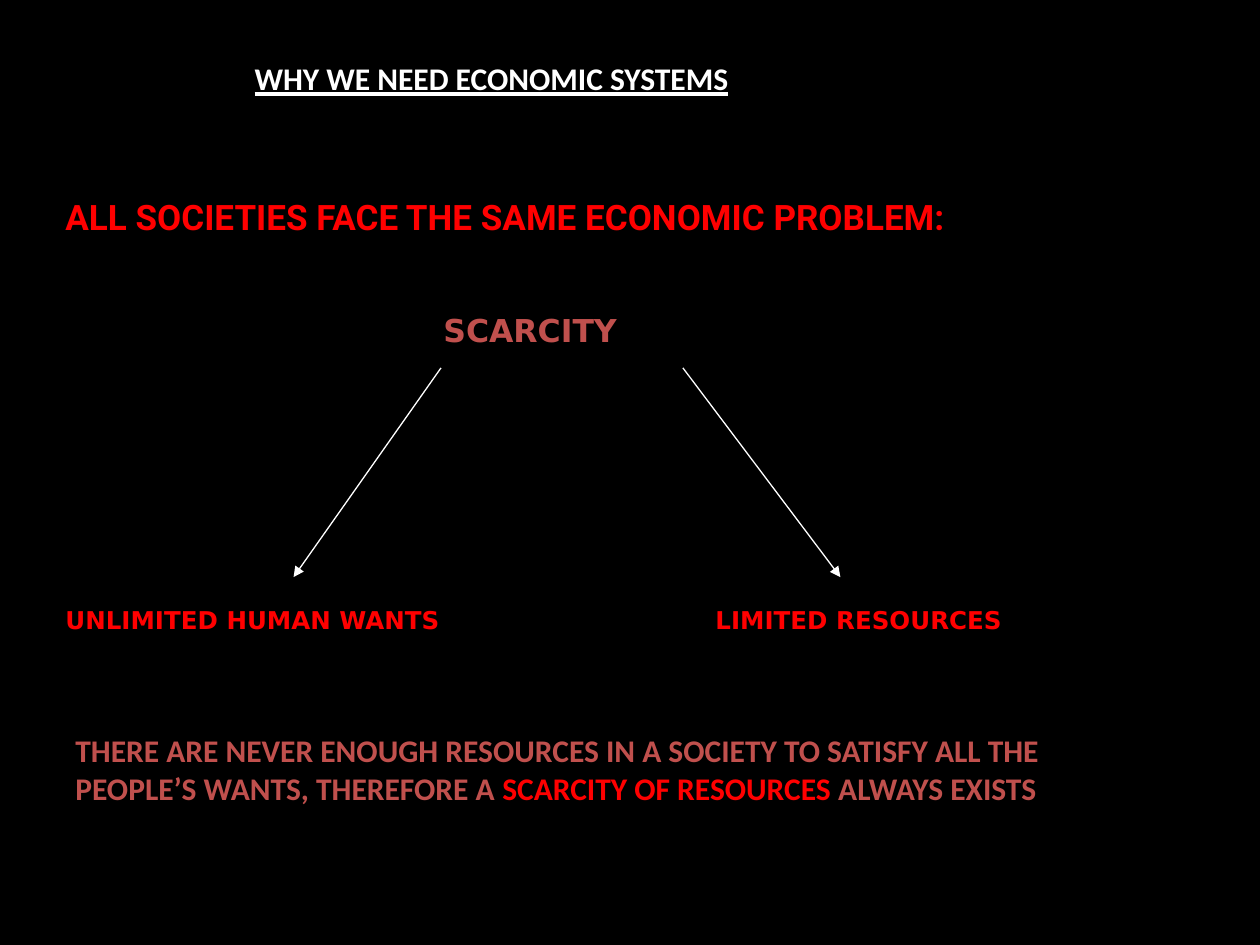
from dataclasses import dataclass

from lxml.etree import SubElement
from pptx import Presentation
from pptx.dml.color import RGBColor
from pptx.enum.shapes import MSO_CONNECTOR
from pptx.enum.text import MSO_ANCHOR, MSO_AUTO_SIZE, PP_ALIGN
from pptx.oxml.ns import qn
from pptx.util import Inches, Pt

BLACK = RGBColor(0x00, 0x00, 0x00)
WHITE = RGBColor(0xFF, 0xFF, 0xFF)
RED = RGBColor(0xFF, 0x00, 0x00)
BRICK = RGBColor(0xC0, 0x50, 0x4D)


@dataclass(frozen=True)
class Span:
    text: str
    color: RGBColor
    underline: bool = False


@dataclass(frozen=True)
class Label:
    left: float
    top: float
    width: float
    height: float
    font: str
    size: int
    spans: tuple[Span, ...]


@dataclass(frozen=True)
class Arrow:
    start: tuple[float, float]
    end: tuple[float, float]


TITLE = Label(1.92, 0.42, 6.42, 0.5, "Calibri", 18,
              (Span("WHY WE NEED ECONOMIC SYSTEMS", WHITE, underline=True),))
LABELS = (
    Label(0.42, 1.5, 9.08, 0.43, "Roboto", 20,
          (Span("ALL SOCIETIES FACE THE SAME ECONOMIC PROBLEM:", RED),)),
    Label(3.42, 2.42, 2.42, 0.5, "DejaVu Sans", 18, (Span("SCARCITY", BRICK),)),
    Label(0.42, 4.75, 3.58, 0.33, "DejaVu Sans", 14,
          (Span("UNLIMITED HUMAN WANTS", RED),)),
    Label(5.58, 4.75, 3.5, 0.33, "DejaVu Sans", 14,
          (Span("LIMITED RESOURCES", RED),)),
    Label(0.5, 5.75, 8.75, 1.21, "Calibri", 18, (
        Span("THERE ARE NEVER ENOUGH RESOURCES IN A SOCIETY TO SATISFY ALL THE "
             "PEOPLE’S WANTS, THEREFORE A ", BRICK),
        Span("SCARCITY OF RESOURCES ", RED),
        Span("ALWAYS EXISTS", BRICK),
    )),
)
ARROWS = (
    Arrow((3.5, 2.92), (2.33, 4.58)),
    Arrow((5.42, 2.92), (6.67, 4.58)),
)


def write_label(box, label: Label) -> None:
    """Place a text box or placeholder and fill it run by run."""
    box.left, box.top = Inches(label.left), Inches(label.top)
    box.width, box.height = Inches(label.width), Inches(label.height)
    frame = box.text_frame
    frame.word_wrap = True
    frame.auto_size = MSO_AUTO_SIZE.NONE
    frame.vertical_anchor = MSO_ANCHOR.TOP
    para = frame.paragraphs[0]
    para.alignment = PP_ALIGN.LEFT
    for span in label.spans:
        run = para.add_run()
        run.text = span.text
        font = run.font
        font.name, font.size = label.font, Pt(label.size)
        font.bold, font.underline = True, span.underline
        font.color.rgb = span.color


def draw_arrow(page, arrow: Arrow) -> None:
    line = page.shapes.add_connector(
        MSO_CONNECTOR.STRAIGHT,
        *(Inches(value) for value in arrow.start + arrow.end))
    line.line.color.rgb = WHITE
    line.line.width = Pt(0.75)
    SubElement(line.line._get_or_add_ln(), qn("a:tailEnd"), type="triangle")
    SubElement(line._element.spPr, qn("a:effectLst"))


def main() -> None:
    deck = Presentation()
    deck.slide_width, deck.slide_height = Inches(10), Inches(7.5)
    page = deck.slides.add_slide(deck.slide_layouts.get_by_name("Title Only"))
    page.background.fill.solid()
    page.background.fill.fore_color.rgb = BLACK

    write_label(page.shapes.title, TITLE)
    for label in LABELS:
        write_label(page.shapes.add_textbox(0, 0, 0, 0), label)
    for arrow in ARROWS:
        draw_arrow(page, arrow)
    deck.save("out.pptx")


if __name__ == "__main__":
    main()
